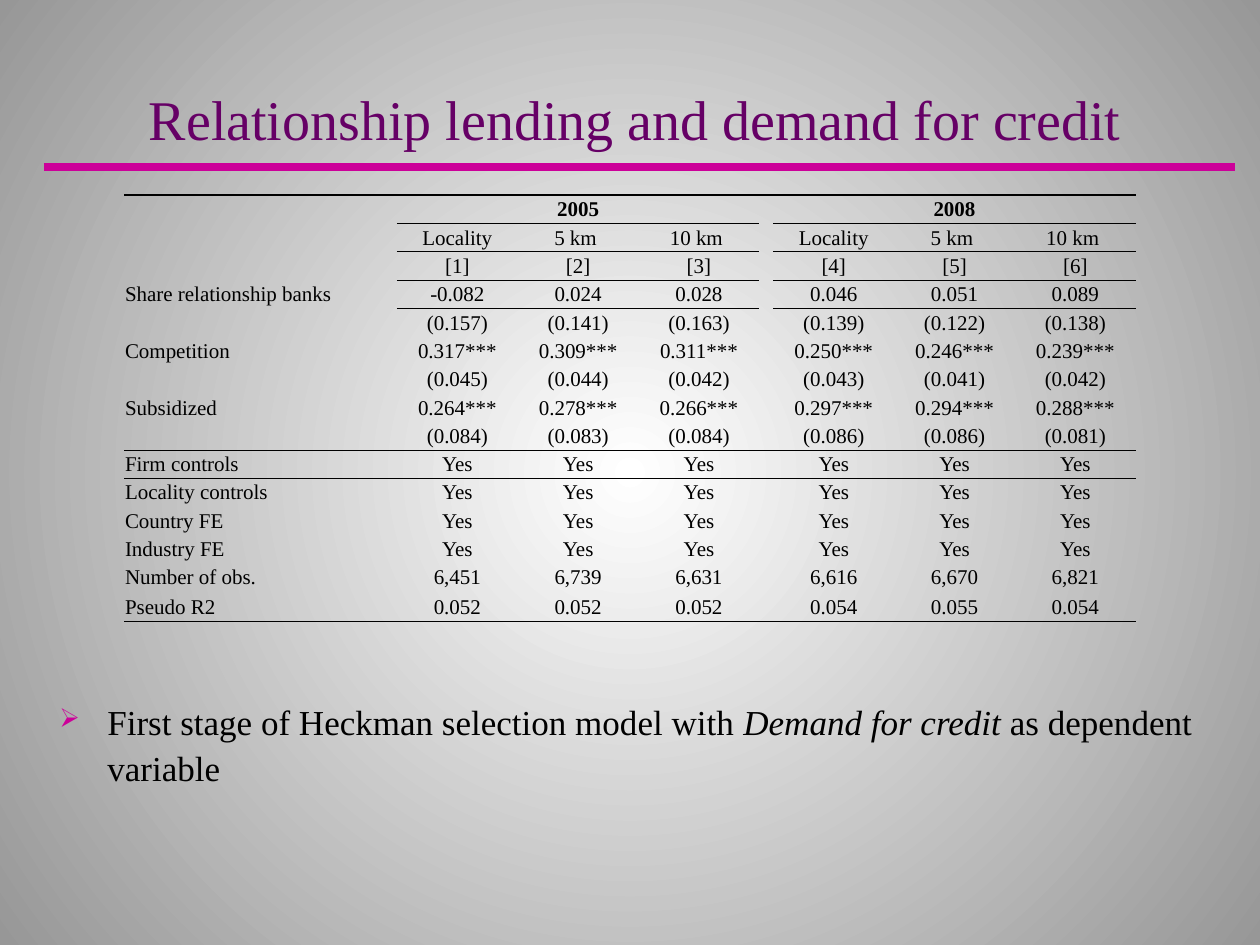
from lxml.etree import SubElement
from pptx import Presentation
from pptx.dml.color import RGBColor
from pptx.enum.shapes import MSO_CONNECTOR
from pptx.enum.text import MSO_ANCHOR, MSO_AUTO_SIZE, PP_ALIGN
from pptx.oxml import parse_xml
from pptx.oxml.ns import nsdecls, qn
from pptx.util import Emu, Pt

PX_PER_INCH = 126
FONT = "Times New Roman"
BLACK, PURPLE, MAGENTA = "000000", "660066", "CC0099"
NO_STYLE_TABLE = "{2D5ABB26-0587-4C30-8999-92F81FD0307C}"

MODELS = (1, 2, 3, 5, 6, 7)
ALL = range(8)
YES = ["Yes"] * 6
DISTANCES = ["Locality", "5 km ", "10 km "]
ROWS = [
    ("", ["2005", "", "", "2008", "", ""]),
    ("", DISTANCES * 2),
    ("", [f"[{n}]" for n in range(1, 7)]),
    ("Share relationship banks", ["-0.082", "0.024", "0.028", "0.046", "0.051", "0.089"]),
    ("", ["(0.157)", "(0.141)", "(0.163)", "(0.139)", "(0.122)", "(0.138)"]),
    ("Competition", ["0.317***", "0.309***", "0.311***", "0.250***", "0.246***", "0.239***"]),
    ("", ["(0.045)", "(0.044)", "(0.042)", "(0.043)", "(0.041)", "(0.042)"]),
    ("Subsidized", ["0.264***", "0.278***", "0.266***", "0.297***", "0.294***", "0.288***"]),
    ("", ["(0.084)", "(0.083)", "(0.084)", "(0.086)", "(0.086)", "(0.081)"]),
    ("Firm controls", YES),
    ("Locality controls", YES),
    ("Country FE", YES),
    ("Industry FE", YES),
    ("Number of obs.", ["6,451", "6,739", "6,631", "6,616", "6,670", "6,821"]),
    ("Pseudo R2", ["0.052", "0.052", "0.052", "0.054", "0.055", "0.054"]),
]
# Row boundary (0 is the table top): line width in points, columns it covers
RULES = {0: (1, ALL), 1: (0.5, MODELS), 2: (0.5, MODELS), 3: (0.5, MODELS),
         9: (0.5, ALL), 15: (1, ALL)}


def px(n):
    return Emu(round(n * 914400 / PX_PER_INCH))


def rgb(hex_color):
    return RGBColor.from_string(hex_color)


def apply(obj, values):
    for name, value in values.items():
        setattr(obj, name, value)


class Deck:
    """Holds the style and the slide being filled."""

    def __init__(self, prs):
        self.slide = prs.slides.add_slide(prs.slide_layouts[5])

    def background(self, center, edge):
        """Circular gradient from the slide centre outwards."""
        self.slide.element.cSld.insert(0, parse_xml(
            f'<p:bg {nsdecls("p", "a")}><p:bgPr><a:gradFill rotWithShape="0"><a:gsLst>'
            f'<a:gs pos="0"><a:srgbClr val="{center}"/></a:gs>'
            f'<a:gs pos="100000"><a:srgbClr val="{edge}"/></a:gs></a:gsLst>'
            '<a:path path="circle"><a:fillToRect l="50000" t="50000" r="50000" b="50000"/>'
            '</a:path></a:gradFill><a:effectLst/></p:bgPr></p:bg>'))

    def run(self, p, text, size, color=BLACK, **style):
        r = p.add_run()
        r.text = text
        apply(r.font, {"name": FONT, "size": Pt(size), **style})
        r.font.color.rgb = rgb(color)

    def title(self, text, x, y, w, h):
        sp = self.slide.shapes.title
        apply(sp, {"left": px(x), "top": px(y), "width": px(w), "height": px(h)})
        tf = sp.text_frame
        apply(tf, {"auto_size": MSO_AUTO_SIZE.NONE, "word_wrap": True,
                   "vertical_anchor": MSO_ANCHOR.BOTTOM})
        p = tf.paragraphs[0]
        p.alignment = PP_ALIGN.CENTER
        self.run(p, text, 32, PURPLE)

    def rule(self, x1, y1, x2, y2):
        line = self.slide.shapes.add_connector(
            MSO_CONNECTOR.STRAIGHT, px(x1), px(y1), px(x2), px(y2))
        line.line.color.rgb = rgb(MAGENTA)
        line.line.width = Pt(4.5)
        SubElement(line._element.spPr, qn("a:effectLst"))

    def bullet(self, runs, x, y, w, h, indent):
        tf = self.slide.shapes.add_textbox(px(x), px(y), px(w), px(h)).text_frame
        tf.word_wrap = True
        p = tf.paragraphs[0]
        p.line_spacing = 1.1
        pPr = p._p.get_or_add_pPr()
        pPr.set("marL", str(px(indent)))
        pPr.set("indent", str(-px(indent)))
        SubElement(SubElement(pPr, qn("a:buClr")), qn("a:srgbClr"), val=MAGENTA)
        SubElement(pPr, qn("a:buSzPct"), val="75000")
        SubElement(pPr, qn("a:buChar"), char="➢")
        for text, italic in runs:
            self.run(p, text, 20, italic=italic)

    def cell(self, cell, text, row, col):
        apply(cell, {"vertical_anchor": MSO_ANCHOR.MIDDLE, "margin_left": px(1),
                     "margin_right": px(1), "margin_top": px(1), "margin_bottom": 0})
        p = cell.text_frame.paragraphs[0]
        if col:
            p.alignment = PP_ALIGN.CENTER
        if text:
            self.run(p, text, 12, bold=row == 0)
        else:
            SubElement(p._p, qn("a:endParaRPr"), sz="1200")
        tcPr = cell._tc.get_or_add_tcPr()
        for tag, edge in (("a:lnT", row), ("a:lnB", row + 1)):
            width, cols = RULES.get(edge, (0, ()))
            if col in cols:
                ln = SubElement(tcPr, qn(tag), w=str(Pt(width)))
                fill = SubElement(ln, qn("a:solidFill"))
                SubElement(fill, qn("a:srgbClr"), val=BLACK)
        cell.fill.background()

    def table(self, x, y, w, h, label_w, gap_w, last_h):
        """Label column, then two groups of three models with a narrow gap between."""
        table = self.slide.shapes.add_table(
            len(ROWS), len(ALL), px(x), px(y), px(w), px(h)).table
        apply(table, {"first_row": False, "horz_banding": False})
        table._tbl.tblPr.find(qn("a:tableStyleId")).text = NO_STYLE_TABLE
        model_w = (w - label_w - gap_w) / len(MODELS)
        widths = [label_w] + [model_w] * 3 + [gap_w] + [model_w] * 3
        for column, width in zip(table.columns, widths):
            column.width = px(width)
        row_h = (h - last_h) / (len(ROWS) - 1)
        for i, (label, values) in enumerate(ROWS):
            table.rows[i].height = px(row_h if i < len(ROWS) - 1 else last_h)
            for j, text in enumerate([label, *values[:3], "", *values[3:]]):
                self.cell(table.cell(i, j), text, i, j)
        for first in (1, 5):
            table.cell(0, first).merge(table.cell(0, first + 2))


def main():
    prs = Presentation()
    prs.slide_width, prs.slide_height = px(1260), px(945)
    deck = Deck(prs)
    deck.background("FFFFFF", "979797")
    deck.title("Relationship lending and demand for credit", 42, 32, 1187, 126)
    deck.bullet([("First stage of Heckman selection model with ", False),
                 ("Demand for credit", True),
                 (" as dependent variable", False)], 47, 690, 1213, 69, indent=48)
    deck.rule(44, 167, 1235, 167)
    deck.table(124, 195, 1012, 427, label_w=273, gap_w=14, last_h=30)
    prs.save("out.pptx")


if __name__ == "__main__":
    main()
